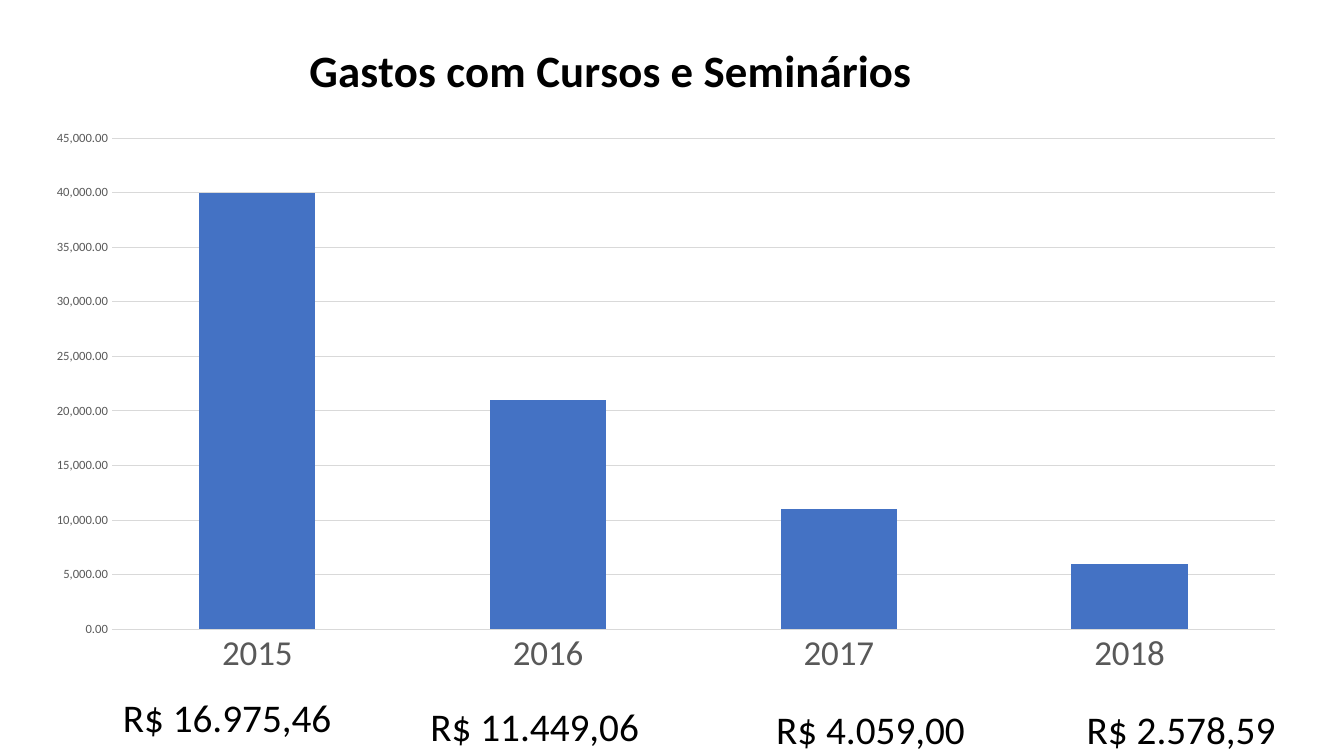
from pptx import Presentation
from pptx.chart.data import CategoryChartData
from pptx.dml.color import RGBColor
from pptx.enum.chart import XL_CHART_TYPE, XL_TICK_MARK
from pptx.oxml import parse_xml
from pptx.oxml.ns import nsdecls, qn
from pptx.util import Inches, Pt

COLORS = {"text": "000000", "axis": "595959", "grid": "D9D9D9", "bar": "4472C4"}
FONT = "Calibri"
EXPENSES = {"2015": 40000, "2016": 21000, "2017": 11000, "2018": 6000}
AMOUNTS = [
    ("R$ 16.975,46", 1.12, 6.83, 2.8),
    ("R$ 11.449,06", 4.17, 6.92, 2.69),
    ("R$ 4.059,00", 7.6, 6.95, 2.46),
    ("R$ 2.578,59", 10.68, 6.95, 2.46),
]


def color(name):
    """Return the named colour."""
    return RGBColor.from_string(COLORS[name])


def style_font(font, size, color_name, bold=False):
    """Set the typeface, size, weight and colour of a font."""
    font.name, font.size, font.bold = FONT, Pt(size), bold
    font.color.rgb = color(color_name)


def style_line(line, color_name):
    """Draw a thin line in the named colour."""
    line.color.rgb = color(color_name)
    line.width = Pt(0.75)


def place_in_chart(parent, index, shares, target=""):
    """Position a chart part by percentages of the chart's size."""
    for layout in parent.findall(qn("c:layout")):
        parent.remove(layout)
    modes = "".join(f'<c:{side}Mode val="edge"/>' for side in "xy")
    values = "".join(f'<c:{key} val="{share / 100:.4f}"/>'
                     for key, share in shares.items())
    parent.insert(index, parse_xml(
        f'<c:layout {nsdecls("c")}><c:manualLayout>{target}{modes}{values}'
        '</c:manualLayout></c:layout>'))


def add_expense_chart(slide, left, top, width, height):
    """Add the column chart of yearly expenses in the given box."""
    data = CategoryChartData(number_format="#,##0.00")
    data.categories = list(EXPENSES)
    data.add_series("Series 1", list(EXPENSES.values()))
    chart = slide.shapes.add_chart(
        XL_CHART_TYPE.COLUMN_CLUSTERED, Inches(left), Inches(top),
        Inches(width), Inches(height), data).chart
    style_font(chart.font, 10, "text")
    chart.has_legend = False

    heading = chart.chart_title.text_frame.paragraphs[0].add_run()
    heading.text = "Gastos com Cursos e Seminários"
    style_font(heading.font, 32, "text", True)
    chart.chart_title.include_in_layout = False
    place_in_chart(chart.chart_title._element, 1, {"x": 21.3, "y": 2.2})

    plot_area = chart.plots[0]._element.getparent()
    place_in_chart(plot_area, 0, {"x": 6.36, "y": 18.12, "w": 91.7, "h": 72.95},
                   '<c:layoutTarget val="inner"/>')

    years, values = chart.category_axis, chart.value_axis
    for axis, size in ((years, 25), (values, 9)):
        axis.major_tick_mark = axis.minor_tick_mark = XL_TICK_MARK.NONE
        style_font(axis.tick_labels.font, size, "axis")
    style_line(years.format.line, "grid")
    values.format.line.fill.background()
    style_line(values.major_gridlines.format.line, "grid")
    values.minimum_scale, values.maximum_scale, values.major_unit = 0, 45000, 5000
    values.tick_labels.number_format = "#,##0.00"
    values.tick_labels.number_format_is_linked = False

    plot = chart.plots[0]
    plot.gap_width = 150
    plot.vary_by_categories = False
    bars = plot.series[0].format.fill
    bars.solid()
    bars.fore_color.rgb = color("bar")


def add_amount(slide, amount, left, top, width, height=0.57):
    """Add the amount spent in one year in the given box."""
    box = slide.shapes.add_textbox(
        Inches(left), Inches(top), Inches(width), Inches(height))
    box.text_frame.word_wrap = True
    run = box.text_frame.paragraphs[0].add_run()
    run.text = amount
    style_font(run.font, 28, "text")


def main():
    """Build and save the slide."""
    deck = Presentation()
    deck.slide_width, deck.slide_height = Inches(13.33), Inches(7.5)
    slide = deck.slides.add_slide(deck.slide_layouts[6])
    add_expense_chart(slide, 0.31, 0.16, 12.58, 6.68)
    for amount in AMOUNTS:
        add_amount(slide, *amount)
    deck.save("out.pptx")


if __name__ == "__main__":
    main()
